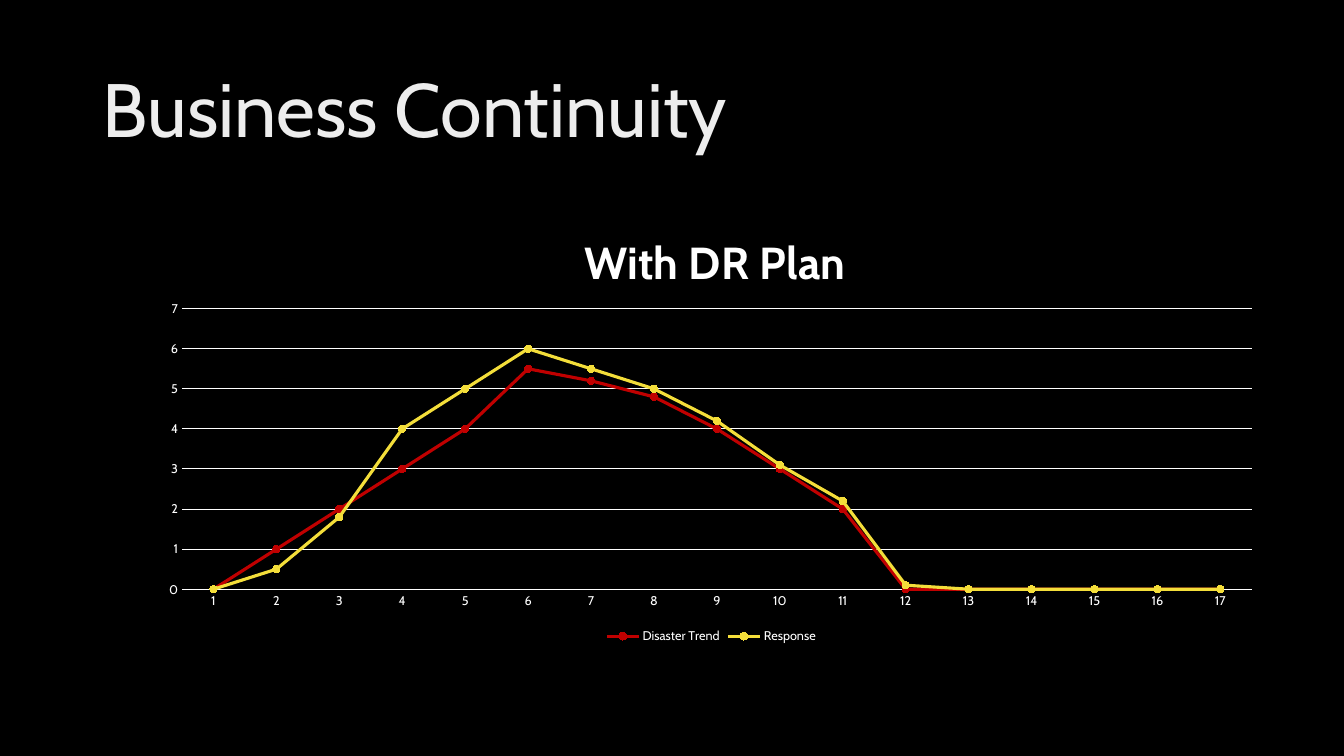
from dataclasses import dataclass

from lxml.etree import SubElement
from pptx import Presentation
from pptx.chart.chart import Chart
from pptx.chart.data import CategoryChartData
from pptx.dml.color import RGBColor
from pptx.enum.chart import XL_CHART_TYPE, XL_LEGEND_POSITION, XL_MARKER_STYLE, XL_TICK_MARK
from pptx.enum.text import MSO_ANCHOR
from pptx.oxml.ns import qn
from pptx.slide import Slide
from pptx.text.text import Font
from pptx.util import Inches, Pt


@dataclass(frozen=True)
class Theme:
    font: str = "Cabin"
    background: str = "000000"
    heading: str = "EDEDED"
    chart_text: str = "FFFFFF"
    heading_size: int = 54
    chart_title_size: int = 32
    chart_size: int = 10
    label_size: int = 9
    grid_width: float = 0.75
    trend_width: float = 2.25
    marker_size: int = 5


@dataclass(frozen=True)
class Trend:
    name: str
    color: str
    values: tuple[float, ...]


THEME = Theme()
PERIODS = [str(period) for period in range(1, 18)]
TRENDS = (
    Trend("Disaster Trend", "C00000",
          (0, 1, 2, 3, 4, 5.5, 5.2, 4.8, 4, 3, 2, 0, 0, 0, 0, 0, 0)),
    Trend("Response", "F4DE3A",
          (0, 0.5, 1.8, 4, 5, 6, 5.5, 5, 4.2, 3.1, 2.2, 0.1, 0, 0, 0, 0, 0)),
)


def style_font(font: Font, size: float, color: str, bold: bool = False) -> None:
    font.name = THEME.font
    font.size = Pt(size)
    font.bold = bold
    font.color.rgb = RGBColor.from_string(color)


def add_heading(slide: Slide, text: str) -> None:
    heading = slide.shapes.add_textbox(Inches(0.92), Inches(0.4), Inches(11.5), Inches(1.45))
    frame = heading.text_frame
    frame.word_wrap = True
    frame.vertical_anchor = MSO_ANCHOR.MIDDLE
    frame.text = text
    paragraph = frame.paragraphs[0]
    paragraph.line_spacing = 0.9
    style_font(paragraph.runs[0].font, THEME.heading_size, THEME.heading)


def place_part(part, **settings: str | float) -> None:
    layout = part.find(qn("c:layout"))
    if layout is None:
        layout = SubElement(part, qn("c:layout"))
        part.remove(layout)
        position = 1 if part.find(qn("c:tx")) is not None else 0
        part.insert(position, layout)
    manual = SubElement(layout, qn("c:manualLayout"))
    for name, value in settings.items():
        SubElement(manual, qn(f"c:{name}")).set("val", str(value))


def style_axes(chart: Chart) -> None:
    white = RGBColor.from_string(THEME.chart_text)
    for axis in (chart.category_axis, chart.value_axis):
        axis.major_tick_mark = XL_TICK_MARK.NONE
        axis.minor_tick_mark = XL_TICK_MARK.NONE
        style_font(axis.tick_labels.font, THEME.label_size, THEME.chart_text)
    chart.value_axis.minimum_scale = 0
    chart.value_axis.maximum_scale = 7
    chart.value_axis.major_unit = 1
    chart.value_axis.format.line.fill.background()
    for line in (chart.category_axis.format.line, chart.value_axis.major_gridlines.format.line):
        line.color.rgb = white
        line.width = Pt(THEME.grid_width)


def add_trend_chart(slide: Slide, title: str) -> None:
    data = CategoryChartData()
    data.categories = PERIODS
    for trend in TRENDS:
        data.add_series(trend.name, trend.values)
    chart = slide.shapes.add_chart(
        XL_CHART_TYPE.LINE_MARKERS, Inches(1.47), Inches(1.94), Inches(11.17), Inches(4.49), data
    ).chart
    style_font(chart.font, THEME.chart_size, THEME.chart_text)
    chart.has_title = True
    title_frame = chart.chart_title.text_frame
    title_frame.text = title
    style_font(title_frame.paragraphs[0].runs[0].font,
               THEME.chart_title_size, THEME.chart_text, bold=True)
    chart.chart_title.include_in_layout = False
    chart.has_legend = True
    chart.legend.position = XL_LEGEND_POSITION.BOTTOM
    chart.legend.include_in_layout = False
    style_font(chart.legend.font, THEME.label_size, THEME.chart_text)
    style_axes(chart)

    plot = chart.plots[0]
    plot.vary_by_categories = False
    for series, trend in zip(plot.series, TRENDS):
        color = RGBColor.from_string(trend.color)
        series.smooth = False
        series.format.line.color.rgb = color
        series.format.line.width = Pt(THEME.trend_width)
        series.marker.style = XL_MARKER_STYLE.CIRCLE
        series.marker.size = THEME.marker_size
        series.marker.format.fill.solid()
        series.marker.format.fill.fore_color.rgb = color
        series.marker.format.line.color.rgb = color

    chart_space = chart.element
    place_part(chart_space.find(f".//{qn('c:title')}"),
               xMode="edge", yMode="edge", x=0.38, y=0.06)
    place_part(chart_space.find(f".//{qn('c:plotArea')}"),
               layoutTarget="inner", xMode="edge", yMode="edge", x=0.03, y=0.25, w=0.95, h=0.62)


def main() -> None:
    presentation = Presentation()
    presentation.slide_width = Inches(13.33)
    presentation.slide_height = Inches(7.5)
    slide = presentation.slides.add_slide(presentation.slide_layouts[6])
    background = slide.background.fill
    background.solid()
    background.fore_color.rgb = RGBColor.from_string(THEME.background)
    add_heading(slide, "Business Continuity")
    add_trend_chart(slide, "With DR Plan")
    presentation.save("out.pptx")


if __name__ == "__main__":
    main()
